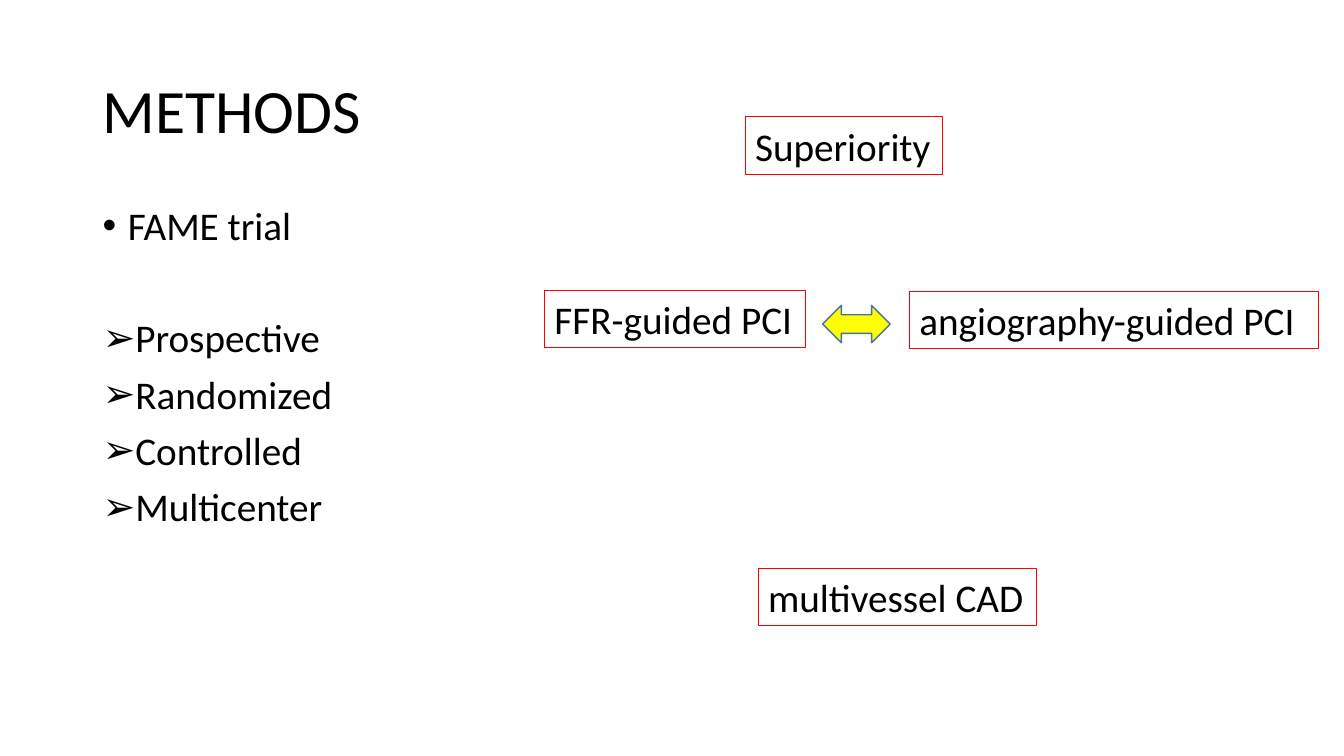
import dataclasses

import pptx
import pptx.dml.color
import pptx.enum.shapes
import pptx.enum.text
import pptx.oxml
import pptx.oxml.ns
import pptx.util

Inches = pptx.util.Inches
Pt = pptx.util.Pt
RGB = pptx.dml.color.RGBColor
Anchor = pptx.enum.text.MSO_ANCHOR


@dataclasses.dataclass(frozen=True)
class Theme:
    font: str = "Calibri"
    title_size: int = 44
    text_size: int = 28
    text: RGB = RGB(0, 0, 0)
    frame: RGB = RGB(0xFF, 0, 0)
    arrow: RGB = RGB(0xFF, 0xFF, 0)
    arrow_edge: RGB = RGB(0x43, 0x73, 0x9E)


@dataclasses.dataclass(frozen=True)
class Bullet:
    text: str
    mark: str = "➢"
    space_before: int = 10


@dataclasses.dataclass(frozen=True)
class Label:
    text: str
    left: float
    top: float
    width: float


THEME = Theme()
LABEL_HEIGHT = 0.57
BULLETS = [
    Bullet("FAME trial", mark="•"),
    Bullet("Prospective", space_before=50),
    Bullet("Randomized"),
    Bullet("Controlled"),
    Bullet("Multicenter"),
]
LABELS = [
    Label("FFR-guided PCI", 5.4, 2.88, 2.59),
    Label("angiography-guided PCI", 9.02, 2.89, 4.06),
    Label("multivessel CAD", 7.52, 5.64, 2.76),
    Label("Superiority", 7.39, 1.16, 1.96),
]


def add_span(para, text: str, size: int) -> None:
    span = para.add_run()
    span.text = text
    span.font.name = THEME.font
    span.font.size = Pt(size)
    span.font.color.rgb = THEME.text


def set_bullet(para, mark: str) -> None:
    properties = para._p.get_or_add_pPr()
    properties.set("marL", str(Inches(0.25)))
    properties.set("indent", str(Inches(-0.25)))
    font = pptx.oxml.parse_xml(
        f'<a:buFont {pptx.oxml.ns.nsdecls("a")} typeface="Arial"/>')
    char = pptx.oxml.parse_xml(
        f'<a:buChar {pptx.oxml.ns.nsdecls("a")} char="{mark}"/>')
    properties.extend([font, char])


def add_title(page, text: str) -> None:
    title = page.shapes.title
    title.left, title.top = Inches(0.92), Inches(0.4)
    title.width, title.height = Inches(4.62), Inches(1.45)
    title.text_frame.vertical_anchor = Anchor.MIDDLE
    para = title.text_frame.paragraphs[0]
    para.alignment = pptx.enum.text.PP_ALIGN.LEFT
    para.line_spacing = 0.9
    add_span(para, text, THEME.title_size)


def add_bullets(page, bullets: list[Bullet]) -> None:
    box = page.shapes.add_textbox(
        Inches(0.92), Inches(2), Inches(5.67), Inches(4.76))
    frame = box.text_frame
    frame.word_wrap = True
    for index, bullet in enumerate(bullets):
        para = frame.add_paragraph() if index else frame.paragraphs[0]
        para.line_spacing = 0.9
        para.space_before = Pt(bullet.space_before)
        set_bullet(para, bullet.mark)
        add_span(para, bullet.text, THEME.text_size)


def add_label(page, label: Label) -> None:
    box = page.shapes.add_textbox(
        Inches(label.left), Inches(label.top),
        Inches(label.width), Inches(LABEL_HEIGHT))
    box.line.color.rgb = THEME.frame
    box.line.width = Pt(0.75)
    frame = box.text_frame
    frame.word_wrap = True
    frame.margin_right = 0
    add_span(frame.paragraphs[0], label.text, THEME.text_size)


def add_comparison_arrow(page) -> None:
    arrow = page.shapes.add_shape(
        pptx.enum.shapes.MSO_SHAPE.LEFT_RIGHT_ARROW,
        Inches(8.16), Inches(3.03), Inches(0.67), Inches(0.37))
    arrow.shadow.inherit = False
    arrow.fill.solid()
    arrow.fill.fore_color.rgb = THEME.arrow
    arrow.line.color.rgb = THEME.arrow_edge
    arrow.line.width = Pt(1)


def main() -> None:
    deck = pptx.Presentation()
    deck.slide_width, deck.slide_height = Inches(13.33), Inches(7.5)
    page = deck.slides.add_slide(deck.slide_layouts.get_by_name("Title Only"))

    # Title and trial design
    add_title(page, "METHODS")
    add_bullets(page, BULLETS)

    # Framed labels and the arrow between the two strategies
    for label in LABELS:
        add_label(page, label)
    add_comparison_arrow(page)

    deck.save("out.pptx")


if __name__ == "__main__":
    main()
